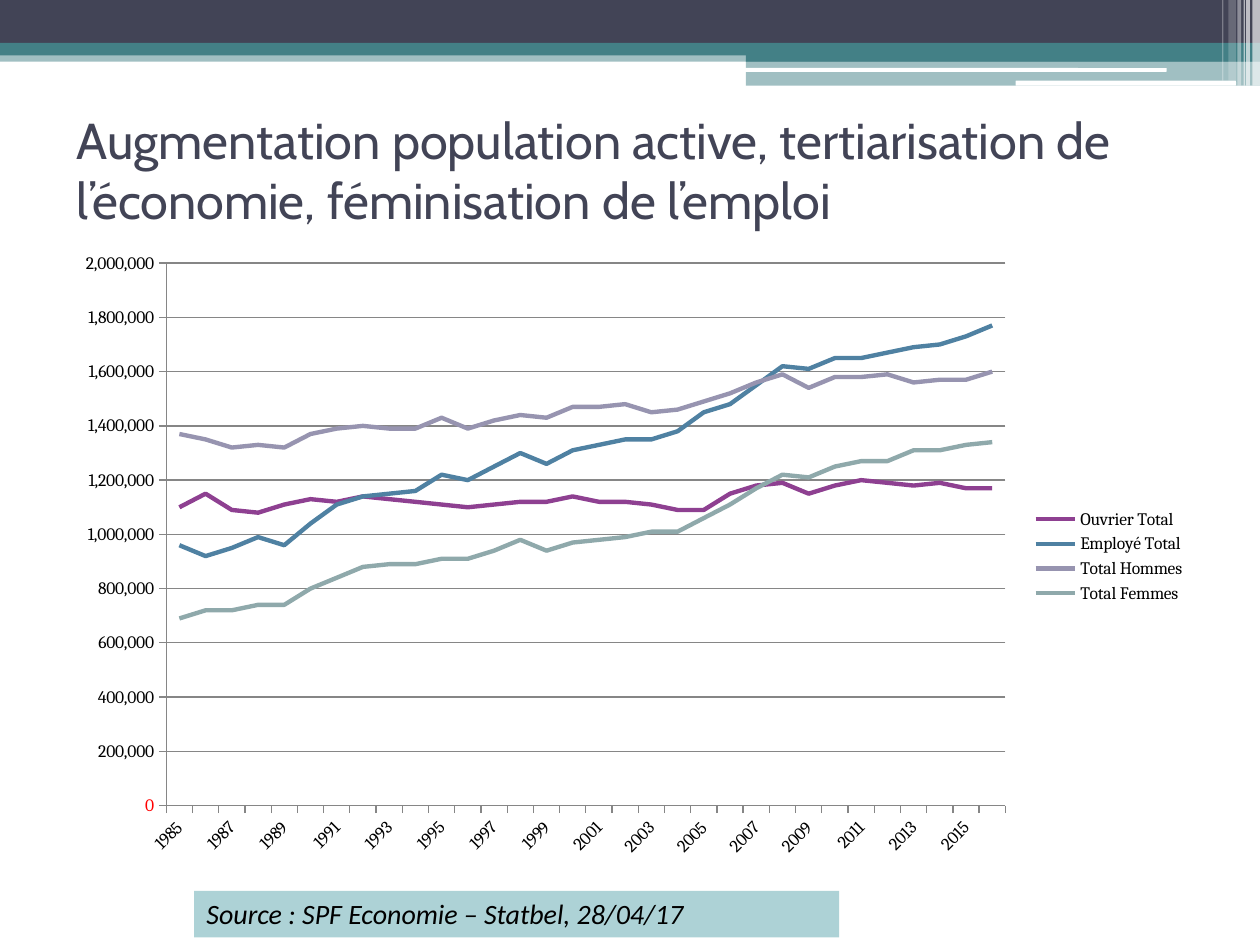
from lxml.etree import SubElement
from pptx import Presentation
from pptx.chart.data import CategoryChartData
from pptx.dml.color import RGBColor
from pptx.enum.chart import XL_CHART_TYPE, XL_LEGEND_POSITION, XL_TICK_MARK
from pptx.enum.shapes import MSO_SHAPE
from pptx.enum.text import MSO_ANCHOR, MSO_AUTO_SIZE, PP_ALIGN
from pptx.oxml import parse_xml
from pptx.oxml.ns import nsdecls, qn
from pptx.util import Inches, Pt

WHITE = RGBColor(0xFF, 0xFF, 0xFF)
BLACK = RGBColor(0, 0, 0)
SLATE = RGBColor(0x42, 0x44, 0x56)
TEAL = RGBColor(0x43, 0x80, 0x86)
PALE_TEAL = RGBColor(0xAD, 0xD2, 0xD6)
GREY = RGBColor(0x86, 0x86, 0x86)

# left, top, width, height, colour, opacity in percent
BANDS = [
    (0, 0.4, 10, 0.09, TEAL, 50),
    (0, 0, 10, 0.34, SLATE, 100),
    (0, 0.34, 10, 0.1, TEAL, 100),
    (5.92, 0.39, 4.08, 0.1, TEAL, 100),
    (5.92, 0.48, 4.08, 0.2, TEAL, 50),
]
RULES = [(5.91, 0.54, 3.35, 0.03, WHITE, 100), (8.06, 0.64, 1.75, 0.04, WHITE, 100)]
STRIPES = [
    (9.94, 0, 0.06, 0.68, WHITE, 65),
    (9.89, 0, 0.03, 0.68, WHITE, 65),
    (9.87, 0, 0.01, 0.68, WHITE, 60),
    (9.82, 0, 0.03, 0.68, WHITE, 40),
    (9.75, 0, 0.06, 0.64, WHITE, 20),
    (9.7, 0, 0.01, 0.64, WHITE, 30),
]

YEARS = range(1985, 2017)
# name, line colour, thousands of people per year
SERIES = [
    ("Ouvrier Total", RGBColor(0x8E, 0x40, 0x91),
     [1100, 1150, 1090, 1080, 1110, 1130, 1120, 1140, 1130, 1120, 1110,
      1100, 1110, 1120, 1120, 1140, 1120, 1120, 1110, 1090, 1090, 1150,
      1180, 1190, 1150, 1180, 1200, 1190, 1180, 1190, 1170, 1170]),
    ("Employé Total", RGBColor(0x4F, 0x81, 0xA2),
     [960, 920, 950, 990, 960, 1040, 1110, 1140, 1150, 1160, 1220,
      1200, 1250, 1300, 1260, 1310, 1330, 1350, 1350, 1380, 1450, 1480,
      1550, 1620, 1610, 1650, 1650, 1670, 1690, 1700, 1730, 1770]),
    ("Total Hommes", RGBColor(0x97, 0x94, 0xB0),
     [1370, 1350, 1320, 1330, 1320, 1370, 1390, 1400, 1390, 1390, 1430,
      1390, 1420, 1440, 1430, 1470, 1470, 1480, 1450, 1460, 1490, 1520,
      1560, 1590, 1540, 1580, 1580, 1590, 1560, 1570, 1570, 1600]),
    ("Total Femmes", RGBColor(0x8F, 0xA9, 0xAB),
     [690, 720, 720, 740, 740, 800, 840, 880, 890, 890, 910,
      910, 940, 980, 940, 970, 980, 990, 1010, 1010, 1060, 1110,
      1170, 1220, 1210, 1250, 1270, 1270, 1310, 1310, 1330, 1340]),
]


def format_font(font, color, **values):
    for name, value in values.items():
        setattr(font, name, value)
    font.color.rgb = color


def add_block(s, box, color, opacity=100, kind=MSO_SHAPE.RECTANGLE):
    sp = s.shapes.add_shape(kind, *map(Inches, box))
    sp.shadow.inherit = False
    sp.fill.solid()
    sp.fill.fore_color.rgb = color
    sp.line.fill.background()
    if opacity < 100:
        clr = sp.fill._xPr.find(".//" + qn("a:srgbClr"))
        SubElement(clr, qn("a:alpha")).set("val", str(opacity * 1000))
    return sp


def add_header(s):
    for parts, kind in ((BANDS, MSO_SHAPE.RECTANGLE),
                        (RULES, MSO_SHAPE.ROUNDED_RECTANGLE),
                        (STRIPES, MSO_SHAPE.RECTANGLE)):
        for *box, color, opacity in parts:
            add_block(s, box, color, opacity, kind)


def place_title(s, box, text):
    title = s.shapes.title
    title.left, title.top, title.width, title.height = map(Inches, box)
    s.shapes._spTree.append(title._element)  # bring in front of the header
    tf = title.text_frame
    tf.text = text
    tf.word_wrap = True
    tf.auto_size = MSO_AUTO_SIZE.NONE
    tf.vertical_anchor = MSO_ANCHOR.MIDDLE
    p = tf.paragraphs[0]
    p.alignment = PP_ALIGN.LEFT
    format_font(p.runs[0].font, SLATE, name="Cabin", size=Pt(28.8))


def set_plot_area(chart, x, y, w, h):
    """Fix the inner plot area, in fractions of the chart."""
    plot_area = chart._chartSpace.chart.plotArea
    for old in plot_area.findall(qn("c:layout")):
        plot_area.remove(old)
    sizes = "".join(f'<c:{tag} val="{val}"/>'
                    for tag, val in zip("xywh", (x, y, w, h)))
    plot_area.insert(0, parse_xml(
        f'<c:layout {nsdecls("c")}><c:manualLayout><c:layoutTarget val="inner"/>'
        f'<c:xMode val="edge"/><c:yMode val="edge"/>{sizes}'
        '</c:manualLayout></c:layout>'))


def add_employment_chart(s, box):
    data = CategoryChartData()
    data.categories = [str(year) for year in YEARS]
    for name, _, thousands in SERIES:
        data.add_series(name, [n * 1000 for n in thousands])
    chart = s.shapes.add_chart(XL_CHART_TYPE.LINE, *map(Inches, box), data).chart
    format_font(chart.font, BLACK, name="Cambria", size=Pt(10))
    chart.has_title = False
    chart.has_legend = True
    chart.legend.position = XL_LEGEND_POSITION.RIGHT
    chart.legend.include_in_layout = False
    set_plot_area(chart, 0.09, 0.03, 0.74, 0.87)

    for series, (_, color, _) in zip(chart.plots[0].series, SERIES):
        series.smooth = False
        series.format.line.width = Pt(2.5)
        series.format.line.color.rgb = color

    cat, val = chart.category_axis, chart.value_axis
    for axis in (cat, val):
        axis.major_tick_mark = XL_TICK_MARK.OUTSIDE
        axis.format.line.color.rgb = GREY
    cat.tick_labels.font.size = Pt(10)
    cat._element.find(qn("c:txPr")).find(qn("a:bodyPr")).set("rot", "-2700000")
    skip = parse_xml(f'<c:tickLblSkip {nsdecls("c")} val="2"/>')
    cat._element.find(qn("c:noMultiLvlLbl")).addprevious(skip)

    val.minimum_scale, val.maximum_scale, val.major_unit = 0, 2000000, 200000
    val.has_major_gridlines = True
    val.major_gridlines.format.line.color.rgb = GREY
    val.tick_labels.number_format = "[Red][<5000]#,##0;[Black][>=5000]#,##0"
    val.tick_labels.number_format_is_linked = False


def add_source(s, box, text):
    tf = add_block(s, box, PALE_TEAL).text_frame
    tf.word_wrap = True
    tf.vertical_anchor = MSO_ANCHOR.TOP
    p = tf.paragraphs[0]
    p.alignment = PP_ALIGN.LEFT
    r = p.add_run()
    r.text = text
    format_font(r.font, BLACK, name="Calibri", size=Pt(16), italic=True)


def main():
    prs = Presentation()
    prs.slide_width, prs.slide_height = Inches(10), Inches(7.5)
    s = prs.slides.add_slide(prs.slide_layouts[5])
    add_header(s)
    place_title(s, (0.51, 0.76, 9, 1.17),
                "Augmentation population active, tertiarisation de "
                "l’économie, féminisation de l’emploi")
    add_employment_chart(s, (0.51, 1.94, 9, 4.95))
    add_source(s, (1.54, 7.07, 5.12, 0.37),
               "Source : SPF Economie – Statbel, 28/04/17")
    prs.save("out.pptx")


if __name__ == "__main__":
    main()
